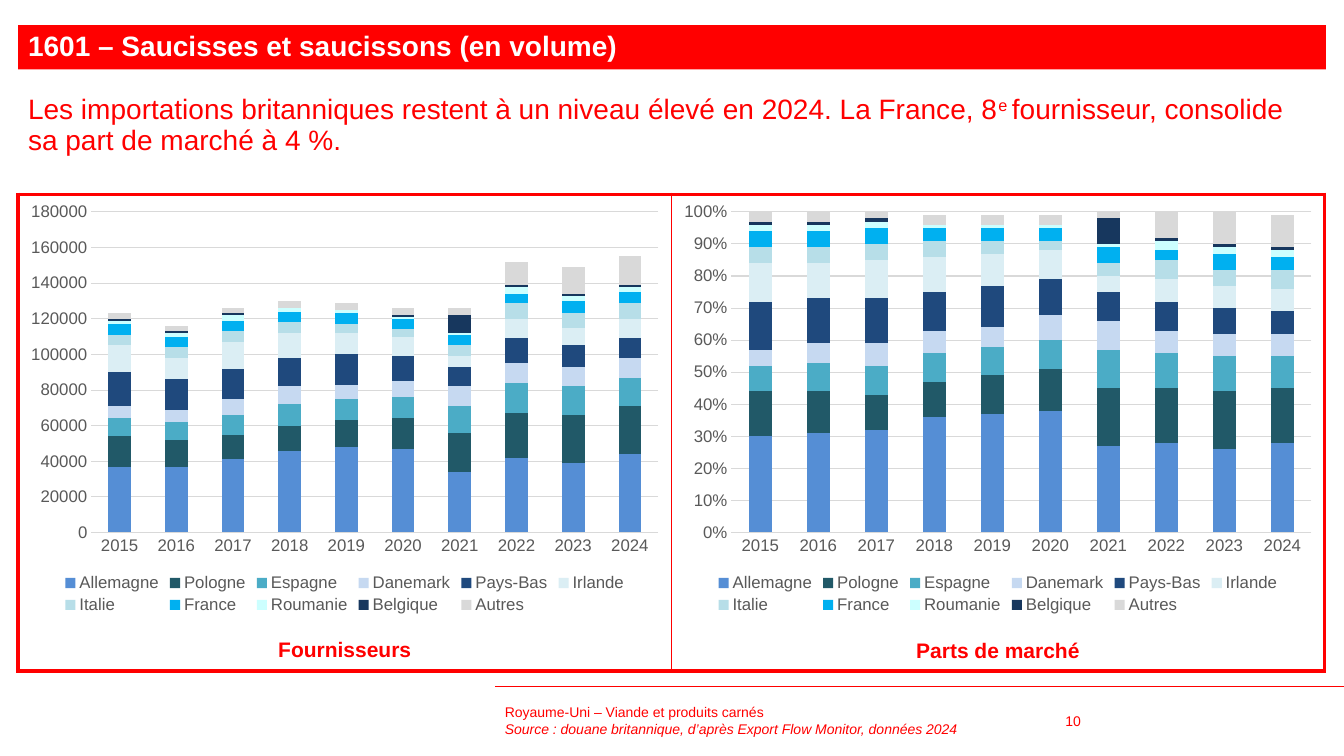
from dataclasses import dataclass

import pptx
import pptx.chart.data
import pptx.dml.color
import pptx.enum.chart
import pptx.enum.shapes
import pptx.enum.text
import pptx.oxml
import pptx.oxml.ns
import pptx.util
from lxml import etree

# Grid of 100 columns by 100 rows
SLIDE_W, SLIDE_H = 13.33, 7.5
LEFT, HALF = 1.35, 48.6
TOP = 25.73
RED, GREY, PALE, WHITE = "FF0000", "595959", "D9D9D9", "FFFFFF"
FONT = "Arial"
YEARS = [str(year) for year in range(2015, 2025)]


@dataclass
class Area:
    col: float
    row: float
    cols: float
    rows: float

    def emu(self) -> tuple:
        return across(self.col), down(self.row), across(self.cols), down(self.rows)


@dataclass
class Supplier:
    name: str
    color: str
    kilotonnes: list  # imports in thousands
    percents: list  # market share


@dataclass
class Panel:
    caption: str
    caption_row: float
    values: str
    scale: float
    maximum: float
    step: float
    number_format: str


SUPPLIERS = [
    Supplier("Allemagne", "558ED5", [37, 37, 41, 46, 48, 47, 34, 42, 39, 44],
             [30, 31, 32, 36, 37, 38, 27, 28, 26, 28]),
    Supplier("Pologne", "215968", [17, 15, 14, 14, 15, 17, 22, 25, 27, 27],
             [14, 13, 11, 11, 12, 13, 18, 17, 18, 17]),
    Supplier("Espagne", "4BACC6", [10, 10, 11, 12, 12, 12, 15, 17, 16, 16],
             [8, 9, 9, 9, 9, 9, 12, 11, 11, 10]),
    Supplier("Danemark", "C6D9F1", [7, 7, 9, 10, 8, 9, 11, 11, 11, 11],
             [5, 6, 7, 7, 6, 8, 9, 7, 7, 7]),
    Supplier("Pays-Bas", "1F497D", [19, 17, 17, 16, 17, 14, 11, 14, 12, 11],
             [15, 14, 14, 12, 13, 11, 9, 9, 8, 7]),
    Supplier("Irlande", "DBEEF4", [15, 12, 15, 14, 12, 11, 6, 11, 10, 11],
             [12, 11, 12, 11, 10, 9, 5, 7, 7, 7]),
    Supplier("Italie", "B7DEE8", [6, 6, 6, 6, 5, 4, 6, 9, 8, 9],
             [5, 5, 5, 5, 4, 3, 4, 6, 5, 6]),
    Supplier("France", "00B0F0", [6, 6, 6, 6, 6, 6, 6, 5, 7, 6],
             [5, 5, 5, 4, 4, 4, 5, 3, 5, 4]),
    Supplier("Roumanie", "CCFFFF", [2, 2, 3, 2, 2, 1, 1, 4, 3, 3],
             [2, 2, 2, 1, 1, 1, 1, 3, 2, 2]),
    Supplier("Belgique", "17375E", [1, 1, 1, 0, 0, 1, 10, 1, 1, 1],
             [1, 1, 1, 0, 0, 0, 8, 1, 1, 1]),
    Supplier("Autres", PALE, [3, 3, 3, 4, 4, 4, 4, 13, 15, 16],
             [3, 3, 3, 3, 3, 3, 3, 8, 10, 10]),
]
PANELS = [
    Panel("Fournisseurs", 83.6, "kilotonnes", 1000, 180000, 20000, "General"),
    Panel("Parts de marché", 83.73, "percents", 0.01, 1, 0.1, "0%"),
]


def across(cols: float) -> int:
    return pptx.util.Inches(SLIDE_W * cols / 100)


def down(rows: float) -> int:
    return pptx.util.Inches(SLIDE_H * rows / 100)


def rgb(color: str) -> pptx.dml.color.RGBColor:
    return pptx.dml.color.RGBColor.from_string(color)


def style(font, size: float, color: str, bold: bool = False) -> None:
    font.name, font.size, font.bold = FONT, pptx.util.Pt(size), bold
    font.color.rgb = rgb(color)


def write(shape, lines: list, size: float, color: str = RED, bold: bool = False,
          middle: bool = False, centred: bool = False, spacing: float = 1.0) -> list:
    frame = shape.text_frame
    frame.word_wrap = True
    anchors, aligns = pptx.enum.text.MSO_ANCHOR, pptx.enum.text.PP_ALIGN
    frame.vertical_anchor = anchors.MIDDLE if middle else anchors.TOP
    frame.text = "\n".join(lines)
    for paragraph in frame.paragraphs:
        paragraph.alignment = aligns.CENTER if centred else aligns.LEFT
        paragraph.line_spacing = spacing
        for run in paragraph.runs:
            style(run.font, size, color, bold)
    return list(frame.paragraphs)


def set_borders(cell, widths: dict) -> None:
    properties = cell._tc.get_or_add_tcPr()
    for place, (side, points) in enumerate(widths.items()):
        border = pptx.oxml.parse_xml(
            f'<a:ln{side} {pptx.oxml.ns.nsdecls("a")} w="{pptx.util.Pt(points)}">'
            f'<a:solidFill><a:srgbClr val="{RED}"/></a:solidFill></a:ln{side}>')
        properties.insert(place, border)


def draw_chart(slide, panel: Panel, area: Area) -> None:
    data = pptx.chart.data.CategoryChartData(number_format=panel.number_format)
    data.categories = YEARS
    for supplier in SUPPLIERS:
        values = getattr(supplier, panel.values)
        data.add_series(supplier.name, [round(v * panel.scale, 2) for v in values])
    kinds = pptx.enum.chart
    chart = slide.shapes.add_chart(
        kinds.XL_CHART_TYPE.COLUMN_STACKED, *area.emu(), data).chart
    chart.has_title = False
    style(chart.font, 12, GREY)
    chart.has_legend = True
    chart.legend.position = kinds.XL_LEGEND_POSITION.BOTTOM
    chart.legend.include_in_layout = False
    style(chart.legend.font, 12, GREY)

    plot = chart.plots[0]
    plot.gap_width, plot.overlap, plot.vary_by_categories = 150, 100, False
    for series, supplier in zip(plot.series, SUPPLIERS):
        series.format.fill.solid()
        series.format.fill.fore_color.rgb = rgb(supplier.color)

    years, amounts = chart.category_axis, chart.value_axis
    for axis in (years, amounts):
        axis.major_tick_mark = axis.minor_tick_mark = kinds.XL_TICK_MARK.NONE
        style(axis.tick_labels.font, 12, GREY)
    amounts.minimum_scale, amounts.maximum_scale = 0, panel.maximum
    amounts.major_unit = panel.step
    amounts.tick_labels.number_format = panel.number_format
    amounts.tick_labels.number_format_is_linked = False
    amounts.format.line.fill.background()
    for line in (years.format.line, amounts.major_gridlines.format.line):
        line.color.rgb, line.width = rgb(PALE), pptx.util.Pt(0.75)


def main() -> None:
    deck = pptx.Presentation()
    deck.slide_width, deck.slide_height = across(100), down(100)
    slide = deck.slides.add_slide(deck.slide_layouts[6])
    shapes = slide.shapes

    # Footer rule
    rule = shapes.add_connector(pptx.enum.shapes.MSO_CONNECTOR.STRAIGHT,
                                across(100), down(90.8), across(36.83), down(90.8))
    rule.line.color.rgb, rule.line.width = rgb(RED), pptx.util.Pt(0.5)
    etree.SubElement(rule._element.spPr, pptx.oxml.ns.qn("a:effectLst"))

    # Framed panels
    frame = shapes.add_table(1, 2, *Area(LEFT, TOP, 2 * HALF, 63.07).emu()).table
    frame.first_row = frame.horz_banding = False
    for cell, left, right in zip(frame.rows[0].cells, (3, 1), (1, 3)):
        cell.fill.background()
        set_borders(cell, {"L": left, "R": right, "T": 3, "B": 3})

    # Captions and charts
    for index, panel in enumerate(PANELS):
        col = LEFT + index * HALF
        caption = shapes.add_textbox(*Area(col, panel.caption_row, HALF, 4.67).emu())
        write(caption, [panel.caption], 15, bold=True, centred=True)
        draw_chart(slide, panel, Area(col, TOP, HALF, 56))

    # Footer
    source = shapes.add_textbox(*Area(36.83, 92.67, 40.74, 5.33).emu())
    credit = write(source, [
        "Royaume-Uni – Viande et produits carnés",
        "Source : douane britannique, d’après Export Flow Monitor, données 2024",
    ], 10, middle=True)[1]
    credit.runs[0].font.italic = True
    number = shapes.add_textbox(*Area(78.54, 92.67, 7.43, 5.33).emu())
    write(number, ["10"], 10, middle=True)

    # Title band
    band = shapes.add_shape(pptx.enum.shapes.MSO_SHAPE.RECTANGLE,
                            *Area(LEFT, 3.33, 97.3, 5.87).emu())
    band.shadow.inherit = False
    band.fill.solid()
    band.fill.fore_color.rgb = rgb(RED)
    band.line.fill.background()
    write(band, ["1601 – Saucisses et saucissons (en volume)"], 20, WHITE,
          bold=True, middle=True, spacing=0.9)

    # Key message
    message = shapes.add_textbox(*Area(LEFT, 12, 2 * HALF, 10.8).emu())
    opening = write(message, ["Les importations britanniques restent à un niveau "
                              "élevé en 2024. La France, 8"], 20, spacing=0.9)[0]
    for text, raised in (("e ", True), ("fournisseur, consolide sa part de marché à 4 %.", False)):
        run = opening.add_run()
        run.text = text
        style(run.font, 20, RED)
        if raised:
            run.font._element.set("baseline", "30000")

    deck.save("out.pptx")


if __name__ == "__main__":
    main()
